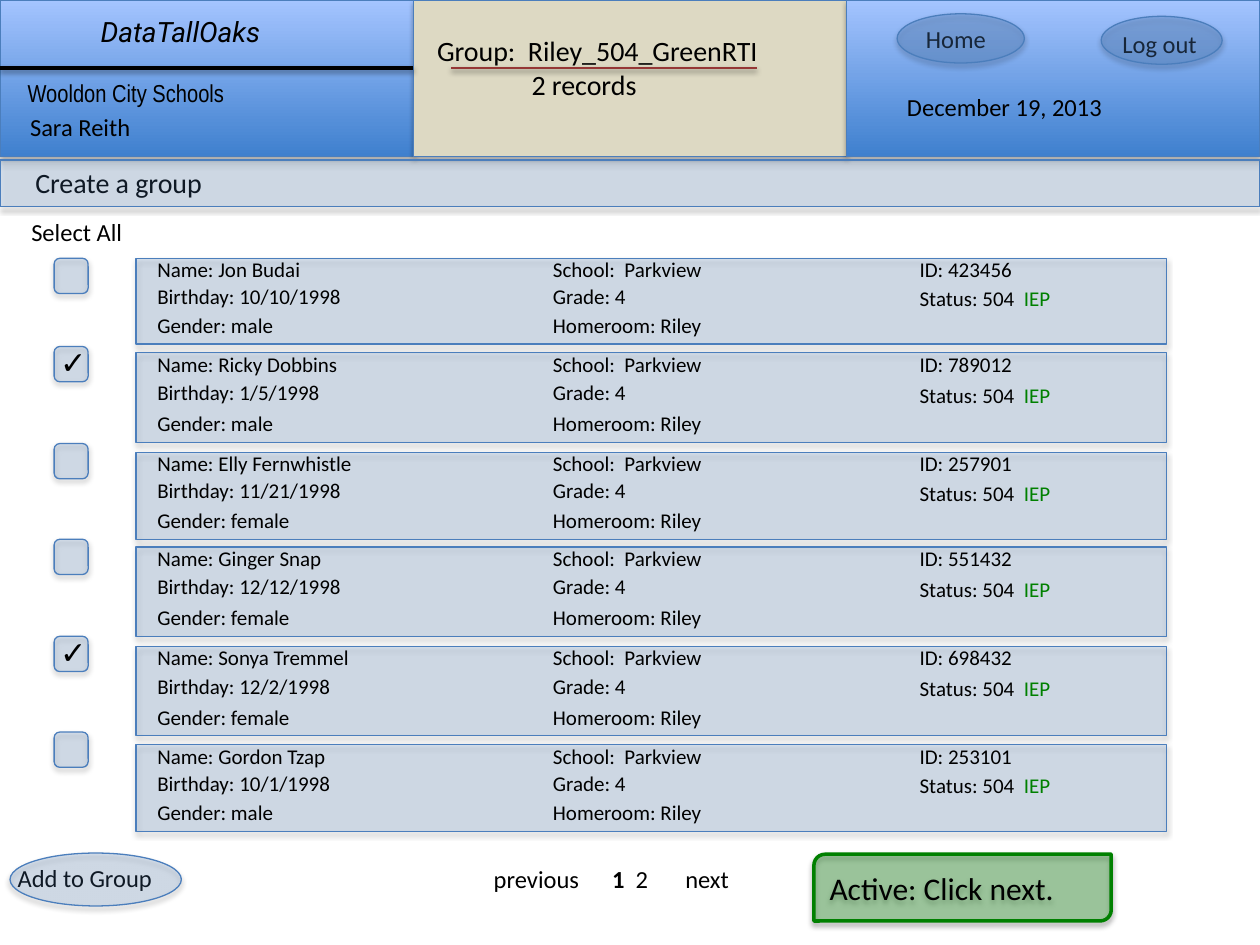
import dataclasses

import lxml.etree
import pptx
import pptx.dml.color
import pptx.enum.shapes
import pptx.enum.text
import pptx.oxml.ns
import pptx.util

SHAPE = pptx.enum.shapes.MSO_SHAPE
ANCHOR = pptx.enum.text.MSO_ANCHOR
AUTO_SIZE = pptx.enum.text.MSO_AUTO_SIZE
COLUMNS, ROWS = 100, 75
CELL = pptx.util.Inches(0.1)


@dataclasses.dataclass(frozen=True)
class Theme:
    black: str = "000000"
    green: str = "008000"
    red: str = "953735"
    blue: str = "4F81BD"
    edge: str = "4B7EBC"
    sand: str = "DDD9C3"
    gradient: tuple = ("3F80CE", "A4C4FF")
    font: str = "Calibri"
    small: int = 12
    normal: int = 14
    heading: int = 16
    large: int = 18


@dataclasses.dataclass(frozen=True)
class Box:
    """A region in grid columns and rows."""
    left: float
    top: float
    width: float
    height: float

    def inner(self, left, top, width, height):
        return Box(self.left + left, self.top + top, width, height)

    def lengths(self):
        return [round(value * CELL) for value in dataclasses.astuple(self)]


THEME = Theme()


def rgb(color):
    return pptx.dml.color.RGBColor.from_string(color)


def add_shadow(properties, opacity, distance):
    """Put a soft downward shadow on a shape's or connector's properties."""
    effects = properties.find(pptx.oxml.ns.qn("a:effectLst"))
    if effects is None:
        effects = lxml.etree.SubElement(properties, pptx.oxml.ns.qn("a:effectLst"))
    shadow = lxml.etree.SubElement(
        effects, pptx.oxml.ns.qn("a:outerShdw"), blurRad=str(pptx.util.Pt(3.1)),
        dist=str(pptx.util.Pt(distance)), dir="5400000", rotWithShape="0")
    color = lxml.etree.SubElement(shadow, pptx.oxml.ns.qn("a:srgbClr"), val=THEME.black)
    lxml.etree.SubElement(color, pptx.oxml.ns.qn("a:alpha"), val=str(opacity * 1000))


def add_panel(shapes, box, kind=SHAPE.RECTANGLE, fill=THEME.blue, opacity=20,
              line=THEME.edge, line_width=0.75):
    """Add a shadowed shape; a tuple as fill gives a gradient from bottom to top."""
    shape = shapes.add_shape(kind, *box.lengths())
    if isinstance(fill, tuple):
        shape.fill.gradient()
        shape.fill.gradient_angle = 90
        for stop, color in zip(shape.fill.gradient_stops, fill):
            stop.color.rgb = rgb(color)
    else:
        shape.fill.solid()
        shape.fill.fore_color.rgb = rgb(fill)
        if opacity < 100:
            color = shape._element.spPr.find(".//" + pptx.oxml.ns.qn("a:srgbClr"))
            lxml.etree.SubElement(color, pptx.oxml.ns.qn("a:alpha"), val=str(opacity * 1000))
    shape.line.color.rgb = rgb(line)
    shape.line.width = pptx.util.Pt(line_width)
    shape.shadow.inherit = False
    add_shadow(shape._element.spPr, 35, 1.8)
    return shape


def add_rule(shapes, box, color, width):
    left, top, length, _ = box.lengths()
    connector = shapes.add_connector(
        pptx.enum.shapes.MSO_CONNECTOR.STRAIGHT, left, top, left + length, top)
    connector.line.color.rgb = rgb(color)
    connector.line.width = pptx.util.Pt(width)
    add_shadow(connector._element.spPr, 38, 1.6)


def write(shape, *runs, size=THEME.normal, font=THEME.font, italic=None, wrap=True,
          anchor=ANCHOR.TOP, inset=None, space_after=0, fit=True, new_paragraph=False,
          indent=0):
    """Write one paragraph of runs, each a text or a (text, color, bold) tuple."""
    frame = shape.text_frame
    frame.word_wrap = wrap
    frame.vertical_anchor = anchor
    frame.auto_size = AUTO_SIZE.SHAPE_TO_FIT_TEXT if fit else AUTO_SIZE.NONE
    if inset is not None:
        frame.margin_left = frame.margin_right = inset
        frame.margin_top = frame.margin_bottom = inset
    paragraph = frame.add_paragraph() if new_paragraph else frame.paragraphs[0]
    paragraph.alignment = pptx.enum.text.PP_ALIGN.LEFT
    paragraph.space_after = pptx.util.Pt(space_after)
    if indent:
        paragraph._p.get_or_add_pPr().set("marL", str(round(indent * CELL)))
    for item in runs:
        text, color, bold = (item, THEME.black, None) if isinstance(item, str) else item
        run = paragraph.add_run()
        run.text = text
        run.font.size = pptx.util.Pt(size)
        run.font.name = font
        run.font.italic = italic
        run.font.bold = bold
        run.font.color.rgb = rgb(color)


def add_text(shapes, box, *runs, **format):
    shape = shapes.add_textbox(*box.lengths())
    write(shape, *runs, **format)
    return shape


def add_header(shapes, box):
    side, middle = 32.8, 34.4
    right = side + middle
    for left, width, fill in ((0, side, THEME.gradient), (side, middle, THEME.sand),
                              (right, side, THEME.gradient)):
        add_panel(shapes, box.inner(left, 0, width, box.height), fill=fill, opacity=100)

    add_text(shapes, box.inner(7, 0.7, 18.9, 3.7), "DataTallOaks",
             size=THEME.heading, font="Roboto", italic=True)
    add_rule(shapes, box.inner(0, 5.4, side, 0), THEME.black, 2)
    add_text(shapes, box.inner(1.2, 5.7, 18.9, 3.4), "Wooldon City Schools", font="Arial Narrow")
    add_text(shapes, box.inner(1.4, 8.4, 13.7, 3.4), "Sara Reith")

    group = add_text(shapes, box.inner(33.7, 2.2, 30.8, 6.4), "Group:  Riley_504_GreenRTI",
                     size=THEME.heading)
    write(group, "2 records", size=THEME.heading, new_paragraph=True, indent=7.5)
    add_rule(shapes, box.inner(35.8, 5.4, 24.3, 0), THEME.red, 1.5)

    add_text(shapes, box.inner(72.5, 1.4, 7.8, 3.4), "Home")
    add_panel(shapes, box.inner(71.2, 1.1, 10.1, 3.9), SHAPE.OVAL, opacity=30)
    add_text(shapes, box.inner(88.1, 1.8, 9, 3.4), "Log out")
    add_panel(shapes, box.inner(87.4, 1.3, 9.6, 3.8), SHAPE.OVAL, opacity=30)
    add_text(shapes, box.inner(71, 6.8, 18.7, 3.4), "December 19, 2013")


def add_title_bar(shapes, box):
    title = shapes.title
    title.left, title.top, title.width, title.height = box.inner(1.8, -0.1, 17.6, 3.7).lengths()
    write(title, "Create a group", size=THEME.heading)
    add_panel(shapes, box)


def add_record(shapes, box, name, birthday, gender, number):
    """Add one student's card, with three lines of details in three columns."""
    group = shapes.add_group_shape().shapes
    add_panel(group, box)
    line_height = 3
    first, last = -0.6, box.height - line_height
    middle = (first + last) / 2 - 0.1
    status = middle + 0.2
    details = (
        (0.7, 29.4, first, [f"Name: {name}"]),
        (0.7, 28, middle, [f"Birthday: {birthday}"]),
        (0.7, 23.9, last, [f"Gender: {gender}"]),
        (32.1, 19.2, first, ["School:  Parkview"]),
        (32.1, 10.9, middle, ["Grade: 4"]),
        (32.1, 21.7, last, ["Homeroom: Riley"]),
        (61.2, 15.6, first, [f"ID: {number}"]),
        (61.2, 17.8, status, ["Status: 504  ", ("IEP", THEME.green, None)]),
    )
    for left, width, top, runs in details:
        add_text(group, box.inner(left, top, width, line_height), *runs, size=THEME.small)


def add_checkbox(shapes, box, checked):
    add_panel(shapes, box, SHAPE.ROUNDED_RECTANGLE)
    if checked:
        add_text(shapes, box.inner(-0.5, -0.75, 4, 4), "✓", size=THEME.large,
                 font="Arial", wrap=False)


def add_records(shapes, box):
    add_text(shapes, box.inner(1.5, 0, 9.3, 3.4), "Select All", wrap=False)
    # card top, card height, checkbox top, checked, then the student's details
    records = (
        (3.8, 6.8, 3.8, False, "Jon Budai", "10/10/1998", "male", "423456"),
        (11.3, 7.1, 10.8, True, "Ricky Dobbins", "1/5/1998", "male", "789012"),
        (19.2, 6.9, 18.5, False, "Elly Fernwhistle", "11/21/1998", "female", "257901"),
        (26.7, 7.1, 26.1, False, "Ginger Snap", "12/12/1998", "female", "551432"),
        (34.6, 7.1, 33.8, True, "Sonya Tremmel", "12/2/1998", "female", "698432"),
        (42.4, 6.9, 41.4, False, "Gordon Tzap", "10/1/1998", "male", "253101"),
    )
    for top, height, checkbox_top, checked, *student in records:
        add_record(shapes, box.inner(10.8, top, 81.8, height), *student)
        add_checkbox(shapes, box.inner(4.3, checkbox_top, 2.7, 2.8), checked)


def add_footer(shapes, box):
    add_text(shapes, box.inner(1.4, 0.8, 12.4, 2.7), "Add to Group", wrap=False,
             inset=0, fit=False)
    add_panel(shapes, box.inner(0.8, 0, 13.6, 4.2), SHAPE.OVAL)
    for left, width, runs in ((38.2, 8.9, ["previous"]),
                              (47.6, 4.9, [("1", THEME.black, True), "  2"]),
                              (53.4, 5.5, ["next"])):
        add_text(shapes, box.inner(left, 0.4, width, 3.4), *runs, wrap=False)
    button = add_panel(shapes, box.inner(64.6, 0.1, 23.6, 5.3), SHAPE.ROUND_2_DIAG_RECTANGLE,
                       fill=THEME.green, opacity=32, line=THEME.green, line_width=2)
    write(button, "Active: Click next.", size=THEME.large, anchor=ANCHOR.MIDDLE,
          space_after=6, fit=False)


def main():
    presentation = pptx.Presentation()
    presentation.slide_width = COLUMNS * CELL
    presentation.slide_height = ROWS * CELL
    slide = presentation.slides.add_slide(presentation.slide_layouts.get_by_name("Title Only"))
    add_header(slide.shapes, Box(0, 0, COLUMNS, 12.4))
    add_title_bar(slide.shapes, Box(0, 12.7, COLUMNS, 3.7))
    add_records(slide.shapes, Box(0, 16.7, COLUMNS, 49.3))
    add_footer(slide.shapes, Box(0, 67.7, COLUMNS, 7.3))
    presentation.save("out.pptx")


if __name__ == "__main__":
    main()
